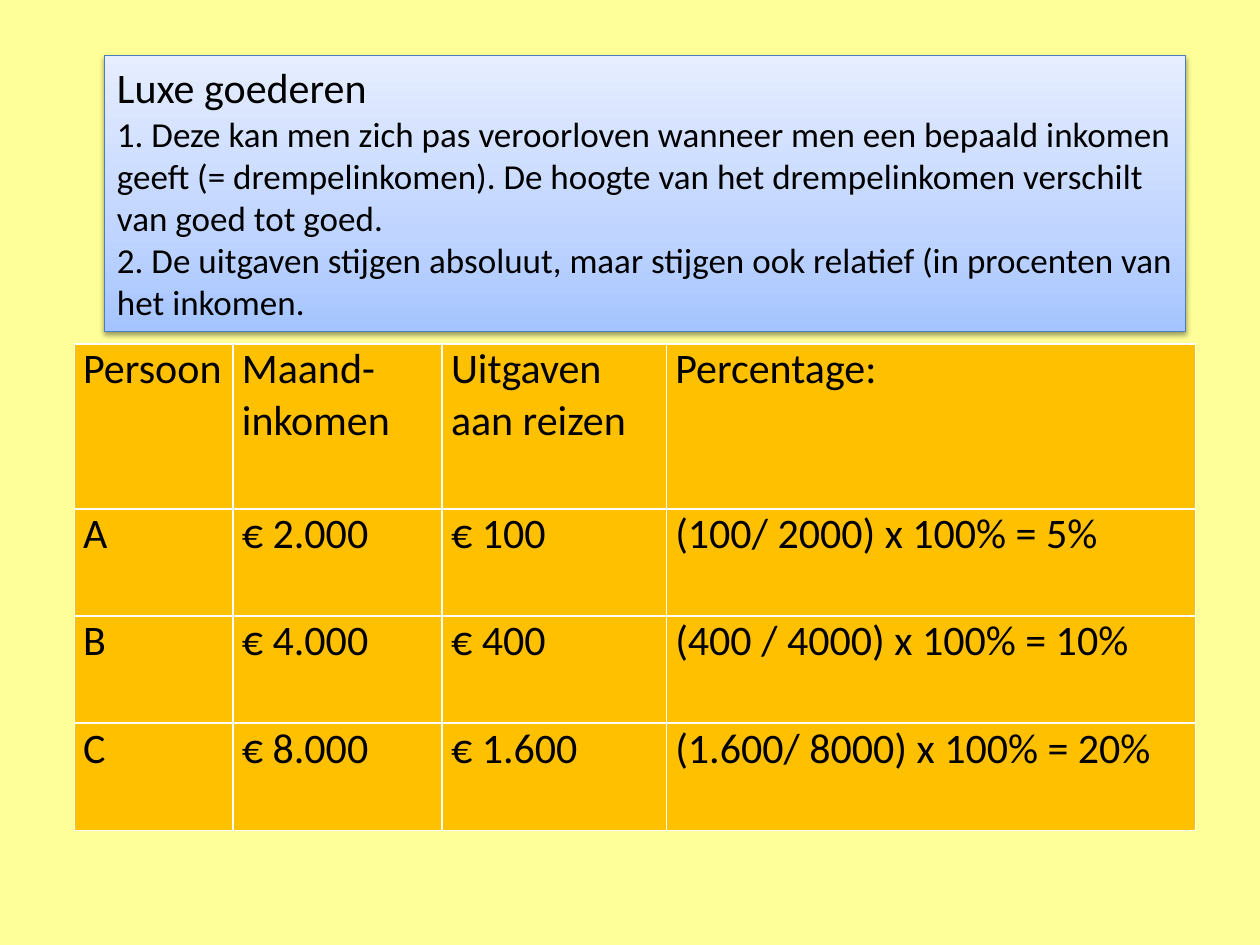
import copy

import pptx
import pptx.dml.color
import pptx.enum.shapes
import pptx.enum.text
import pptx.oxml
import pptx.oxml.ns
import pptx.util
from pptx.dml.color import RGBColor
from pptx.util import Inches, Pt

PARAGRAPHS = [
    ("Luxe goederen", 24),
    ("1. Deze kan men zich pas veroorloven wanneer men een bepaald inkomen geeft "
     "(= drempelinkomen). De hoogte van het drempelinkomen verschilt van goed tot goed.", 20),
    ("2. De uitgaven stijgen absoluut, maar stijgen ook relatief "
     "(in procenten van het inkomen.", 20),
]
ROWS = [
    ("Persoon", "Maand-inkomen", "Uitgaven aan reizen", "Percentage:"),
    ("A", "€ 2.000", "€ 100", "(100/ 2000) x 100% = 5%"),
    ("B", "€ 4.000", "€ 400", "(400 / 4000) x 100% = 10%"),
    ("C", "€ 8.000", "€ 1.600", "(1.600/ 8000) x 100% = 20%"),
]
COL_WIDTHS = [1.26, 1.66, 1.78, 4.2]
ROW_HEIGHTS = [1.31, 0.85, 0.85, 0.85]

BLACK = RGBColor(0x00, 0x00, 0x00)
YELLOW = RGBColor(0xFF, 0xFF, 0x99)
ORANGE = RGBColor(0xFF, 0xC0, 0x00)
BLUE_LINE = RGBColor(0x4B, 0x7E, 0xBC)
GRADIENT = [
    (0, RGBColor(0xA4, 0xC4, 0xFF)),
    (0.35, RGBColor(0xBF, 0xD4, 0xFF)),
    (1, RGBColor(0xE6, 0xEE, 0xFF)),
]
NS = pptx.oxml.ns.nsdecls("a")


def write(p, text, size):
    r = p.add_run()
    r.text = text
    for name, value in {"name": "Calibri", "size": Pt(size)}.items():
        setattr(r.font, name, value)
    r.font.color.rgb = BLACK


def add_borders(cell):
    tc_pr = cell._tc.get_or_add_tcPr()
    for i, side in enumerate("LRTB"):
        tc_pr.insert(i, pptx.oxml.parse_xml(
            f'<a:ln{side} {NS} w="{Pt(1)}"><a:solidFill><a:srgbClr val="FFFFFF"/>'
            f'</a:solidFill></a:ln{side}>'))


def add_table(slide):
    table = slide.shapes.add_table(
        len(ROWS), len(COL_WIDTHS), Inches(0.59), Inches(2.73),
        Inches(sum(COL_WIDTHS)), Inches(sum(ROW_HEIGHTS))).table
    table.first_row = table.horz_banding = False
    for col, width in zip(table.columns, COL_WIDTHS):
        col.width = Inches(width)
    margins = {"margin_left": 0.07, "margin_right": 0.07, "margin_top": 0, "margin_bottom": 0}
    for i, texts in enumerate(ROWS):
        table.rows[i].height = Inches(ROW_HEIGHTS[i])
        for j, text in enumerate(texts):
            cell = table.cell(i, j)
            for name, value in margins.items():
                setattr(cell, name, Inches(value))
            cell.fill.solid()
            cell.fill.fore_color.rgb = ORANGE
            add_borders(cell)
            write(cell.text_frame.paragraphs[0], text, 24)


def fill_gradient(s):
    """Three stops, running from the bottom edge upwards."""
    s.fill.gradient()
    s.fill.gradient_angle = 90
    stops = s._element.spPr.find(".//" + pptx.oxml.ns.qn("a:gsLst"))
    stops.insert(1, copy.deepcopy(stops[0]))
    for stop, (position, color) in zip(s.fill.gradient_stops, GRADIENT):
        stop.position = position
        stop.color.rgb = color


def add_shadow(s):
    s.shadow.inherit = False
    effects = s._element.spPr.find(pptx.oxml.ns.qn("a:effectLst"))
    effects.append(pptx.oxml.parse_xml(
        f'<a:outerShdw {NS} blurRad="{Pt(3.1)}" dist="{Pt(1.6)}" dir="5400000" '
        'rotWithShape="0"><a:srgbClr val="000000"><a:alpha val="38000"/>'
        '</a:srgbClr></a:outerShdw>'))


def add_explanation(slide):
    s = slide.shapes.add_shape(
        pptx.enum.shapes.MSO_SHAPE.RECTANGLE,
        Inches(0.83), Inches(0.44), Inches(8.58), Inches(2.19))
    fill_gradient(s)
    s.line.color.rgb = BLUE_LINE
    s.line.width = Pt(0.75)
    add_shadow(s)
    tf = s.text_frame
    frame = {
        "word_wrap": True,
        "auto_size": pptx.enum.text.MSO_AUTO_SIZE.SHAPE_TO_FIT_TEXT,
        "vertical_anchor": pptx.enum.text.MSO_ANCHOR.TOP,
    }
    for name, value in frame.items():
        setattr(tf, name, value)
    for i, (text, size) in enumerate(PARAGRAPHS):
        p = tf.add_paragraph() if i else tf.paragraphs[0]
        p.alignment = pptx.enum.text.PP_ALIGN.LEFT
        write(p, text, size)


def main():
    prs = pptx.Presentation()
    prs.slide_width, prs.slide_height = Inches(10), Inches(7.5)
    slide = prs.slides.add_slide(prs.slide_layouts[6])
    slide.background.fill.solid()
    slide.background.fill.fore_color.rgb = YELLOW
    add_table(slide)
    add_explanation(slide)
    prs.save("out.pptx")


if __name__ == "__main__":
    main()
